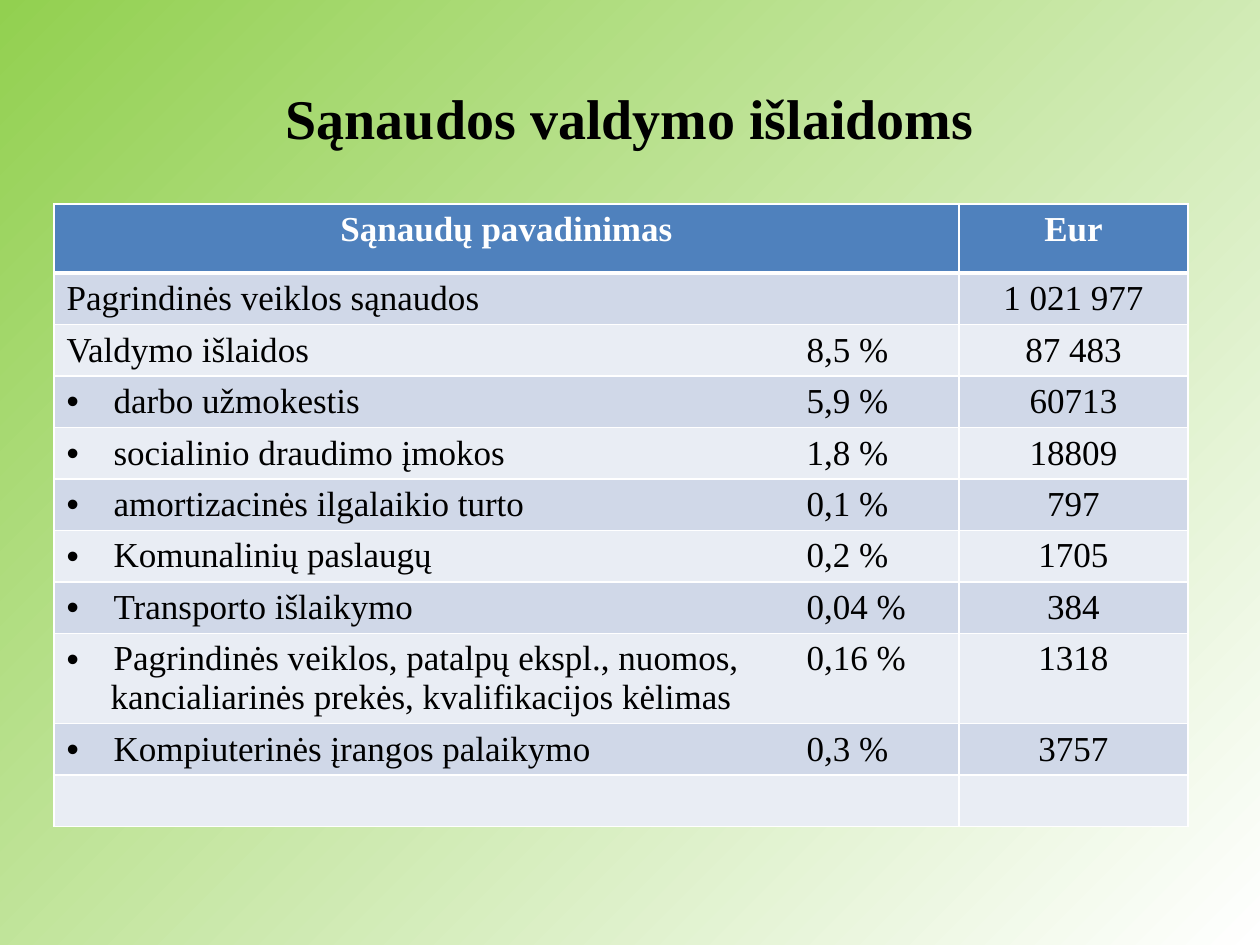
from dataclasses import dataclass

import pptx
import pptx.dml.color
import pptx.enum.text
import pptx.oxml
import pptx.oxml.ns
import pptx.util

EMU_PER_PX = 914400 // 126
ALIGN = pptx.enum.text.PP_ALIGN


@dataclass(frozen=True)
class Theme:
    font: str = "Times New Roman"
    title_size: int = 32
    table_size: int = 20
    text: str = "000000"
    white: str = "FFFFFF"
    green: str = "92D050"
    header: str = "4F81BD"
    bands: tuple = ("D0D8E8", "E9EDF4")
    indent: int = 47
    continuation: int = 44
    share_tab: int = 740


HEADER = ("Sąnaudų pavadinimas", "Eur")
TOTALS = [
    ("Pagrindinės veiklos sąnaudos", "1 021 977"),
    ("Valdymo išlaidos\t8,5 %", "87 483"),
]
EXPENSES = [
    ("darbo užmokestis\t5,9 %", "60713"),
    ("socialinio draudimo įmokos\t1,8 %", "18809"),
    ("amortizacinės ilgalaikio turto\t0,1 %", "797"),
    ("Komunalinių paslaugų\t0,2 %", "1705"),
    ("Transporto išlaikymo\t0,04 %", "384"),
    ("Pagrindinės veiklos, patalpų ekspl., nuomos,\t0,16 %\n"
     "kancialiarinės prekės, kvalifikacijos kėlimas", "1318"),
    ("Kompiuterinės įrangos palaikymo\t0,3 %", "3757"),
]


def px(length):
    return pptx.util.Emu(length * EMU_PER_PX)


def rgb(color):
    return pptx.dml.color.RGBColor.from_string(color)


def add_xml(parent, xml):
    namespace = pptx.oxml.ns.nsdecls("a")
    parent.append(pptx.oxml.parse_xml(xml.replace(" ", f" {namespace} ", 1)))


class SlideBuilder:
    def __init__(self, slide, theme):
        self.slide = slide
        self.theme = theme

    def background(self):
        fill = self.slide.background.fill
        fill.gradient()
        fill.gradient_angle = 315
        for stop, color in zip(fill.gradient_stops, (self.theme.green, self.theme.white)):
            stop.color.rgb = rgb(color)

    def style(self, paragraph, size, color, bold, alignment):
        paragraph.alignment = alignment
        font = paragraph.font
        font.name = self.theme.font
        font.size = pptx.util.Pt(size)
        font.bold = bold
        font.color.rgb = rgb(color)

    def title(self, text, left, top, width, height):
        shape = self.slide.shapes.title
        shape.left, shape.top, shape.width, shape.height = map(px, (left, top, width, height))
        frame = shape.text_frame
        frame.text = text
        frame.vertical_anchor = pptx.enum.text.MSO_ANCHOR.MIDDLE
        self.style(frame.paragraphs[0], self.theme.title_size, self.theme.text, True, ALIGN.CENTER)

    def borders(self, cell, bottom):
        properties = cell._tc.get_or_add_tcPr()
        for side, points in (("L", 1), ("R", 1), ("T", 1), ("B", bottom)):
            add_xml(properties, f'<a:ln{side} w="{pptx.util.Pt(points)}"><a:solidFill>'
                    f'<a:srgbClr val="{self.theme.white}"/></a:solidFill></a:ln{side}>')

    def indent(self, paragraph, bulleted):
        properties = paragraph._p.get_or_add_pPr()
        margin = self.theme.indent if bulleted else self.theme.continuation
        properties.set("marL", str(px(margin)))
        properties.set("indent", str(px(-margin if bulleted else 0)))
        if bulleted:
            add_xml(properties, '<a:buFont typeface="Arial"/>')
            add_xml(properties, '<a:buChar char="•"/>')

    def cell(self, cell, text, fill, header, bulleted, centred):
        self.borders(cell, 3 if header else 1)
        cell.fill.solid()
        cell.fill.fore_color.rgb = rgb(fill)
        cell.text = text
        color = self.theme.white if header else self.theme.text
        for index, paragraph in enumerate(cell.text_frame.paragraphs):
            if bulleted:
                self.indent(paragraph, index == 0)
            if "\t" in text:
                add_xml(paragraph._p.get_or_add_pPr(), '<a:tabLst ><a:tab '
                        f'pos="{px(self.theme.share_tab)}" algn="l"/></a:tabLst>')
            self.style(paragraph, self.theme.table_size, color, header,
                       ALIGN.CENTER if centred else ALIGN.LEFT)

    def table(self, rows, bullet_rows, left, top, widths, heights):
        frame = self.slide.shapes.add_table(
            len(rows), len(widths), px(left), px(top), px(sum(widths)), px(sum(heights)))
        table = frame.table
        for column, width in zip(table.columns, widths):
            column.width = px(width)
        for row_index, (texts, height) in enumerate(zip(rows, heights)):
            table.rows[row_index].height = px(height)
            header = row_index == 0
            fill = self.theme.header if header else self.theme.bands[(row_index - 1) % 2]
            for column_index, text in enumerate(texts):
                self.cell(table.cell(row_index, column_index), text, fill, header,
                          row_index in bullet_rows and column_index == 0,
                          header or column_index == 1)


def main():
    presentation = pptx.Presentation()
    presentation.slide_width, presentation.slide_height = px(1260), px(945)
    slide = presentation.slides.add_slide(presentation.slide_layouts[5])
    builder = SlideBuilder(slide, Theme())
    builder.background()
    builder.title("Sąnaudos valdymo išlaidoms", 63, 38, 1134, 158)

    rows = [HEADER, *TOTALS, *EXPENSES, ("", "")]
    first_bullet = 1 + len(TOTALS)
    bullet_rows = range(first_bullet, first_bullet + len(EXPENSES))
    heights = [69] + [90 if "\n" in name else 51 for name, amount in rows[1:]]
    builder.table(rows, bullet_rows, 54, 204, (905, 229), heights)
    presentation.save("out.pptx")


if __name__ == "__main__":
    main()
